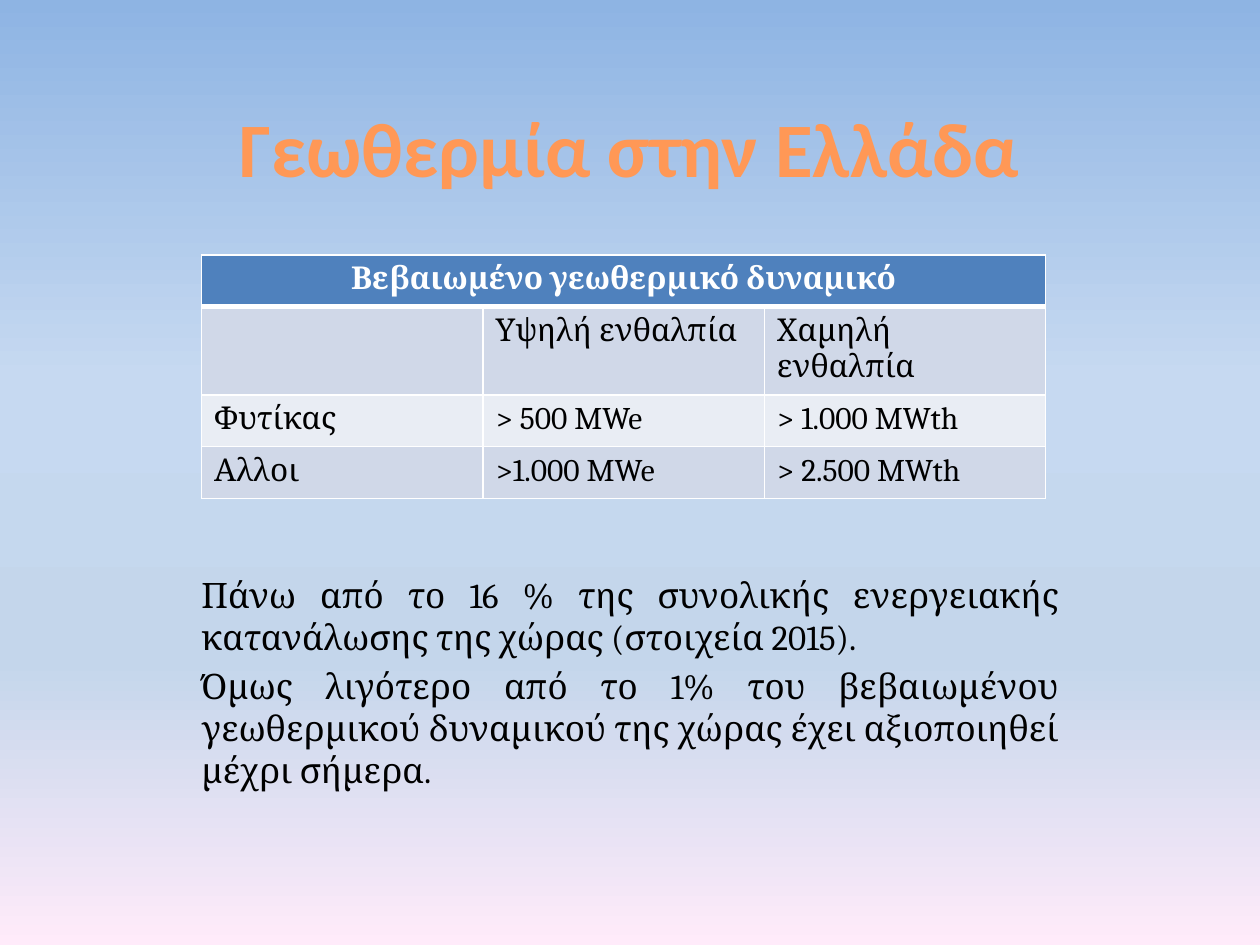
from dataclasses import dataclass

from lxml import etree
from pptx import Presentation
from pptx.dml.color import RGBColor
from pptx.enum.text import MSO_ANCHOR, PP_ALIGN
from pptx.oxml.ns import qn
from pptx.util import Inches, Pt

CENTER, LEFT, JUSTIFY = PP_ALIGN.CENTER, PP_ALIGN.LEFT, PP_ALIGN.JUSTIFY
TOP, MIDDLE = MSO_ANCHOR.TOP, MSO_ANCHOR.MIDDLE

BLACK = RGBColor(0x00, 0x00, 0x00)
WHITE = RGBColor(0xFF, 0xFF, 0xFF)
ORANGE = RGBColor(0xFF, 0x98, 0x56)
HEADER_BLUE = RGBColor(0x4F, 0x81, 0xBD)
BAND_DARK = RGBColor(0xD0, 0xD8, 0xE8)
BAND_LIGHT = RGBColor(0xE9, 0xED, 0xF4)
SKY = [
    (0, RGBColor(0x8E, 0xB4, 0xE3)),
    (40, RGBColor(0xC6, 0xD9, 0xF1)),
    (70, RGBColor(0xC4, 0xD6, 0xEB)),
    (100, RGBColor(0xFF, 0xEB, 0xFA)),
]

WIDTH, HEIGHT = Inches(10), Inches(7.5)
ROW_HEIGHT = Inches(0.41)
ROWS = [
    ["Βεβαιωμένο γεωθερμικό δυναμικό", "", ""],
    ["", "Υψηλή ενθαλπία", "Χαμηλή ενθαλπία"],
    ["Φυτίκας", "> 500 MWe", "> 1.000 MWth"],
    ["Αλλοι", ">1.000 MWe", "> 2.500 MWth"],
]
REMARKS = [
    "Πάνω από το 16 % της συνολικής ενεργειακής κατανάλωσης της χώρας (στοιχεία 2015).",
    "Όμως λιγότερο από το 1% του βεβαιωμένου γεωθερμικού δυναμικού της χώρας "
    "έχει αξιοποιηθεί μέχρι σήμερα.",
]


@dataclass(frozen=True)
class Area:
    """A rectangle in shares of the slide's width and height."""

    left: float
    top: float
    width: float
    height: float

    def lengths(self) -> tuple[int, int, int, int]:
        return (int(self.left * WIDTH), int(self.top * HEIGHT),
                int(self.width * WIDTH), int(self.height * HEIGHT))


TITLE_AREA = Area(0.075, 0.05, 0.85, 0.21)
TABLE_AREA = Area(0.16, 0.27, 0.67, 0.22)
REMARKS_AREA = Area(0.15, 0.6, 0.7, 0.22)


def write_text(frame, lines: list[str], *, font="Cambria", size=18, color=BLACK,
               bold=False, align=LEFT, space_before=0) -> None:
    for index, line in enumerate(lines):
        para = frame.paragraphs[0] if index == 0 else frame.add_paragraph()
        para.alignment = align
        para.space_before = Pt(space_before if index else 0)
        para.font.size = Pt(size)
        if line:
            span = para.add_run()
            span.text = line
            span.font.name = font
            span.font.size = Pt(size)
            span.font.bold = bold
            span.font.color.rgb = color


def add_text_box(page, area: Area, lines: list[str], *, anchor=TOP, **style) -> None:
    frame = page.shapes.add_textbox(*area.lengths()).text_frame
    frame.word_wrap = True
    frame.vertical_anchor = anchor
    write_text(frame, lines, **style)


def paint_background(page, stops: list[tuple[int, RGBColor]]) -> None:
    """Fill the page with a gradient running from top to bottom."""
    fill = page.background.fill
    fill.gradient()
    fill.gradient_angle = 270
    stop_list = page.background._cSld.find(".//" + qn("a:gsLst"))
    for stop in list(stop_list):
        stop_list.remove(stop)
    for percent, color in stops:
        stop = etree.SubElement(stop_list, qn("a:gs"), pos=str(percent * 1000))
        etree.SubElement(stop, qn("a:srgbClr"), val=str(color))


def set_borders(cell, **points: float) -> None:
    """Draw white cell borders; call before the cell is filled."""
    properties = cell._tc.get_or_add_tcPr()
    for side, width in points.items():
        line = etree.SubElement(properties, qn(f"a:ln{side}"), w=str(Pt(width)))
        solid = etree.SubElement(line, qn("a:solidFill"))
        etree.SubElement(solid, qn("a:srgbClr"), val=str(WHITE))


def add_potential_table(page, area: Area, rows: list[list[str]]) -> None:
    columns = len(rows[0])
    table = page.shapes.add_table(len(rows), columns, *area.lengths()).table
    table.cell(0, 0).merge(table.cell(0, columns - 1))
    for row_index, texts in enumerate(rows):
        table.rows[row_index].height = ROW_HEIGHT
        header = row_index == 0
        band = BAND_DARK if row_index % 2 else BAND_LIGHT
        for column_index, text in enumerate(texts):
            cell = table.cell(row_index, column_index)
            set_borders(cell, L=1, R=1, T=3 if row_index == 1 else 1, B=3 if header else 1)
            cell.fill.solid()
            cell.fill.fore_color.rgb = HEADER_BLUE if header else band
            write_text(cell.text_frame, [text], bold=header,
                       color=WHITE if header else BLACK,
                       align=CENTER if header else LEFT)


def main() -> None:
    deck = Presentation()
    deck.slide_width, deck.slide_height = WIDTH, HEIGHT
    page = deck.slides.add_slide(deck.slide_layouts[6])
    paint_background(page, SKY)
    add_text_box(page, TITLE_AREA, ["Γεωθερμία στην Ελλάδα"], anchor=MIDDLE,
                 font="Calibri", size=44, color=ORANGE, bold=True, align=CENTER)
    add_text_box(page, REMARKS_AREA, REMARKS, size=20, align=JUSTIFY, space_before=4)
    add_potential_table(page, TABLE_AREA, ROWS)
    deck.save("out.pptx")


if __name__ == "__main__":
    main()
